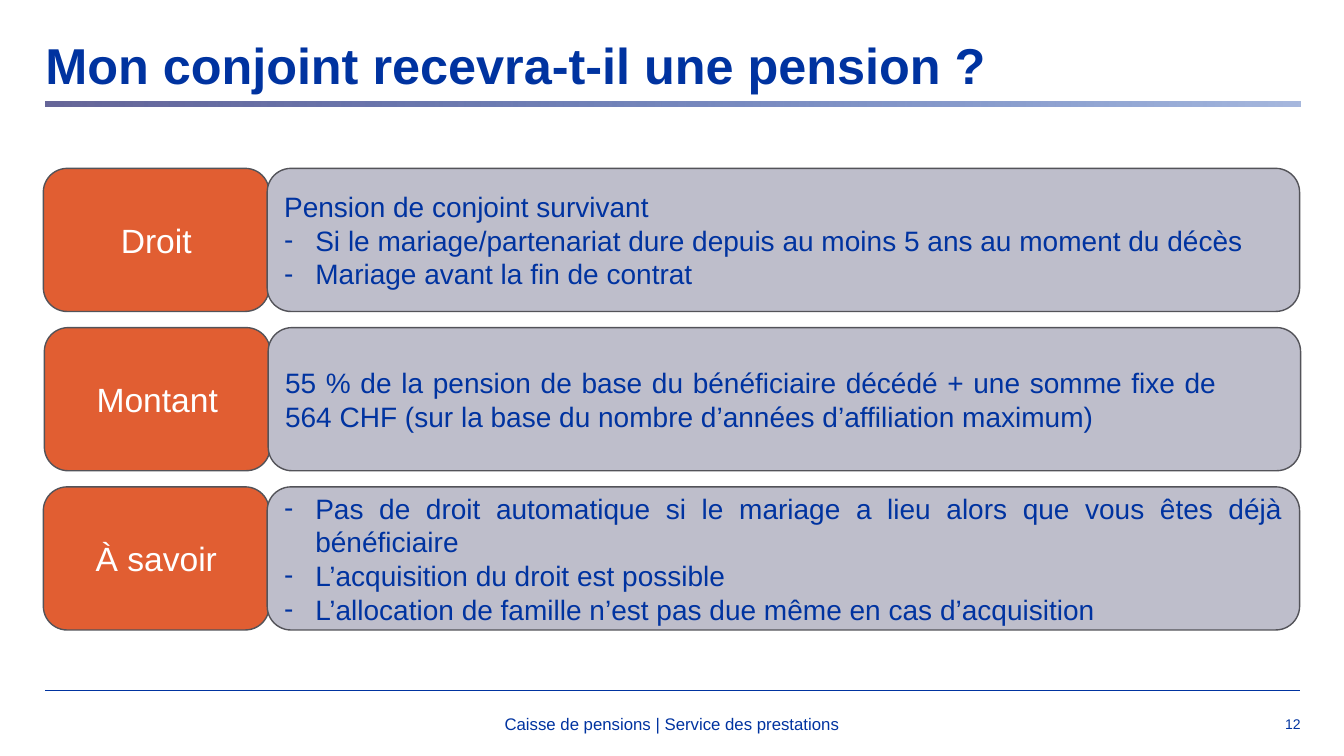
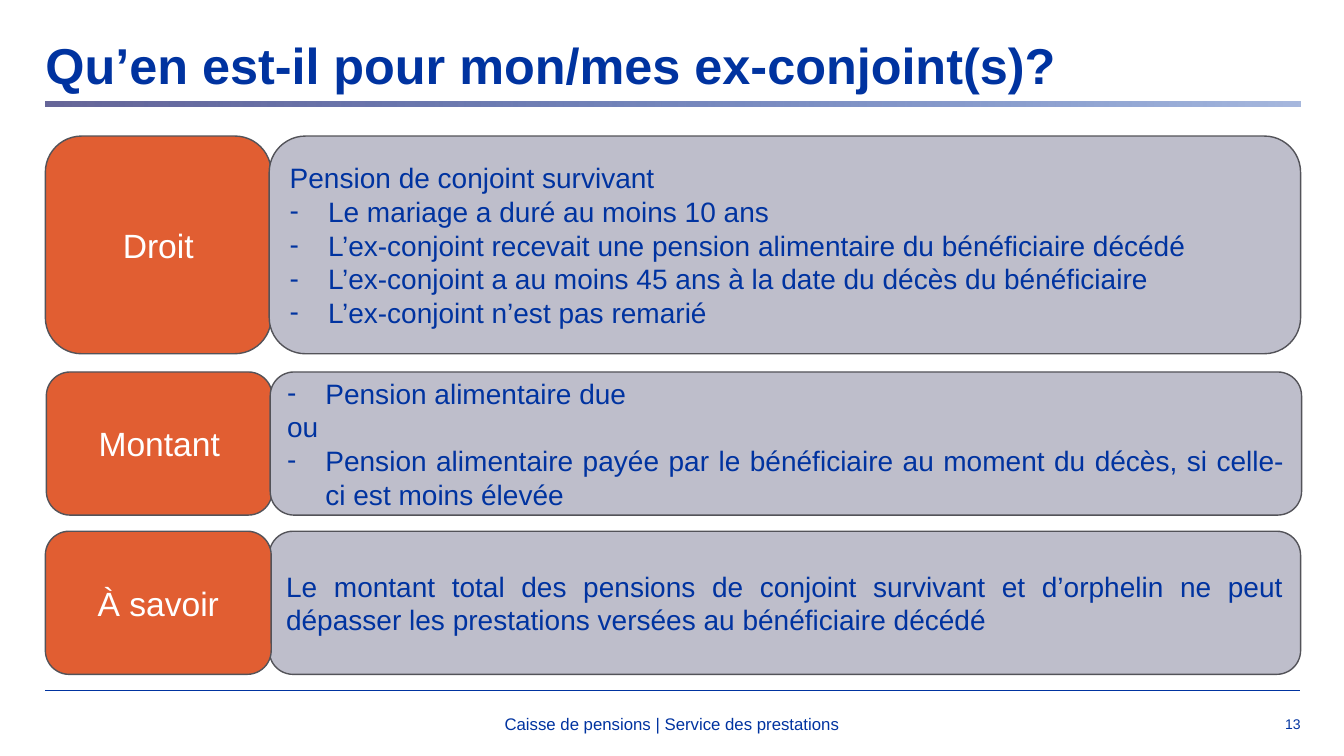
"""Build two slides on survivor's pensions for spouses and former spouses."""
from dataclasses import dataclass

from lxml import etree
from pptx import Presentation
from pptx import util as u
from pptx.dml.color import RGBColor
from pptx.enum import shapes, text
from pptx.oxml.ns import qn


@dataclass(frozen=True)
class Theme:
    font: str = "Arial"
    blue: RGBColor = RGBColor.from_string("0033A0")
    violet: RGBColor = RGBColor.from_string("666699")
    orange: RGBColor = RGBColor.from_string("E15E32")
    grey: RGBColor = RGBColor.from_string("BEBECB")
    outline: RGBColor = RGBColor.from_string("535359")
    white: RGBColor = RGBColor.from_string("FFFFFF")
    title: int = 36
    label: int = 24
    body: int = 20
    footer: int = 12
    number: int = 10


theme = Theme()
PX = 9144
LEFT, CENTER, RIGHT, JUSTIFY = (
    text.PP_ALIGN.LEFT, text.PP_ALIGN.CENTER, text.PP_ALIGN.RIGHT, text.PP_ALIGN.JUSTIFY)
TOP, MIDDLE = text.MSO_ANCHOR.TOP, text.MSO_ANCHOR.MIDDLE


def px(*lengths):
    return [u.Emu(length * PX) for length in lengths]


def write(shape, content, size, color=theme.blue, bold=False, align=LEFT,
          anchor=MIDDLE, indent=0, spacing=None, margin=None, margin_right=None):
    frame = shape.text_frame
    frame.word_wrap = True
    frame.auto_size = text.MSO_AUTO_SIZE.NONE
    frame.vertical_anchor = anchor
    if margin is not None:
        frame.margin_left = frame.margin_right = u.Emu(margin * PX)
        frame.margin_top = frame.margin_bottom = u.Emu(margin * PX)
    if margin_right is not None:
        frame.margin_right = u.Emu(margin_right * PX)
    for index, line in enumerate(content.split("\n")):
        paragraph = frame.paragraphs[0] if index == 0 else frame.add_paragraph()
        paragraph.alignment = align
        if spacing:
            paragraph.line_spacing = spacing
        if line.startswith("- "):
            properties = paragraph._p.get_or_add_pPr()
            properties.set("marL", str(indent * PX))
            properties.set("indent", str(-indent * PX))
            etree.SubElement(properties, qn("a:buFont"), typeface=theme.font)
            etree.SubElement(properties, qn("a:buChar"), char="-")
        paragraph.text = line.removeprefix("- ")
        font = paragraph.font
        font.name, font.size, font.bold = theme.font, u.Pt(size), bold
        font.color.rgb = color


pages = [
    dict(
        number="12", title="Mon conjoint recevra-t-il une pension ?",
        detail_width=1024, indent=31,
        rows=[
            dict(label="Droit", left=43, top=167, height=142, align=LEFT,
                 detail="Pension de conjoint survivant\n"
                        "- Si le mariage/partenariat dure depuis au moins 5 ans au moment du décès\n"
                        "- Mariage avant la fin de contrat"),
            dict(label="Montant", left=44, top=325, height=142, margin_right=76,
                 detail="55 % de la pension de base du bénéficiaire décédé + une somme fixe de "
                        "564 CHF (sur la base du nombre d’années d’affiliation maximum)"),
            dict(label="À savoir", left=43, top=483, height=142,
                 detail="- Pas de droit automatique si le mariage a lieu alors que vous êtes déjà "
                        "bénéficiaire\n"
                        "- L’acquisition du droit est possible\n"
                        "- L’allocation de famille n’est pas due même en cas d’acquisition"),
        ]),
    dict(
        number="13", title="Qu’en est-il pour mon/mes ex-conjoint(s)?",
        detail_width=1023, indent=38,
        rows=[
            dict(label="Droit", left=45, top=135, height=216,
                 detail="Pension de conjoint survivant\n"
                        "- Le mariage a duré au moins 10 ans\n"
                        "- L’ex-conjoint recevait une pension alimentaire du bénéficiaire décédé\n"
                        "- L’ex-conjoint a au moins 45 ans à la date du décès du bénéficiaire\n"
                        "- L’ex-conjoint n’est pas remarié"),
            dict(label="Montant", left=46, top=369, height=142,
                 detail="- Pension alimentaire due\n"
                        "ou\n"
                        "- Pension alimentaire payée par le bénéficiaire au moment du décès, "
                        "si celle-ci est moins élevée"),
            dict(label="À savoir", left=45, top=527, height=142, label_in_front=True,
                 detail="Le montant total des pensions de conjoint survivant et d’orphelin ne peut "
                        "dépasser les prestations versées au bénéficiaire décédé"),
        ]),
]

presentation = Presentation()
presentation.slide_width, presentation.slide_height = px(1333, 750)

for page in pages:
    slide = presentation.slides.add_slide(presentation.slide_layouts[5])

    footer_line = slide.shapes.add_connector(
        shapes.MSO_CONNECTOR.STRAIGHT, *px(45, 685, 1289, 685))
    footer_line.line.color.rgb = theme.blue
    footer_line.line.width = u.Pt(0.75)
    etree.SubElement(footer_line._element.spPr, qn("a:effectLst"))

    title = slide.shapes.title
    title.left, title.top, title.width, title.height = px(45, 41, 1244, 117)
    write(title, page["title"], theme.title, bold=True, anchor=TOP, spacing=0.9, margin=0)

    page_number = slide.shapes.add_textbox(*px(1215, 698, 75, 40))
    write(page_number, page["number"], theme.number, align=RIGHT, margin=0)
    footer = slide.shapes.add_textbox(*px(307, 698, 719, 40))
    write(footer, "Caisse de pensions | Service des prestations", theme.footer, align=CENTER)

    title_band = slide.shapes.add_shape(shapes.MSO_SHAPE.RECTANGLE, *px(45, 101, 1245, 5))
    title_band.shadow.inherit = False
    title_band.line.fill.background()
    title_band.fill.gradient()
    title_band.fill.gradient_angle = 0
    for stop, position, color in zip(
            title_band.fill.gradient_stops, (0, 1), (theme.violet, theme.blue)):
        stop.position = position
        stop.color.rgb = color
    band_end = title_band._element.xpath(".//a:gs/a:srgbClr")[-1]
    etree.SubElement(band_end, qn("a:alpha"), val="35000")

    for row in page["rows"]:
        boxes = [
            (row["left"], 224, theme.orange, row["label"],
             dict(size=theme.label, color=theme.white, align=CENTER)),
            (row["left"] + 222, page["detail_width"], theme.grey, row["detail"],
             dict(size=theme.body, align=row.get("align", JUSTIFY), indent=page["indent"],
                  margin_right=row.get("margin_right"))),
        ]
        if row.get("label_in_front"):
            boxes.reverse()
        for left, width, color, content, style in boxes:
            box = slide.shapes.add_shape(
                shapes.MSO_SHAPE.ROUNDED_RECTANGLE, *px(left, row["top"], width, row["height"]))
            box.shadow.inherit = False
            box.fill.solid()
            box.fill.fore_color.rgb = color
            box.line.color.rgb = theme.outline
            box.line.width = u.Pt(1)
            write(box, content, **style)

presentation.save("out.pptx")
